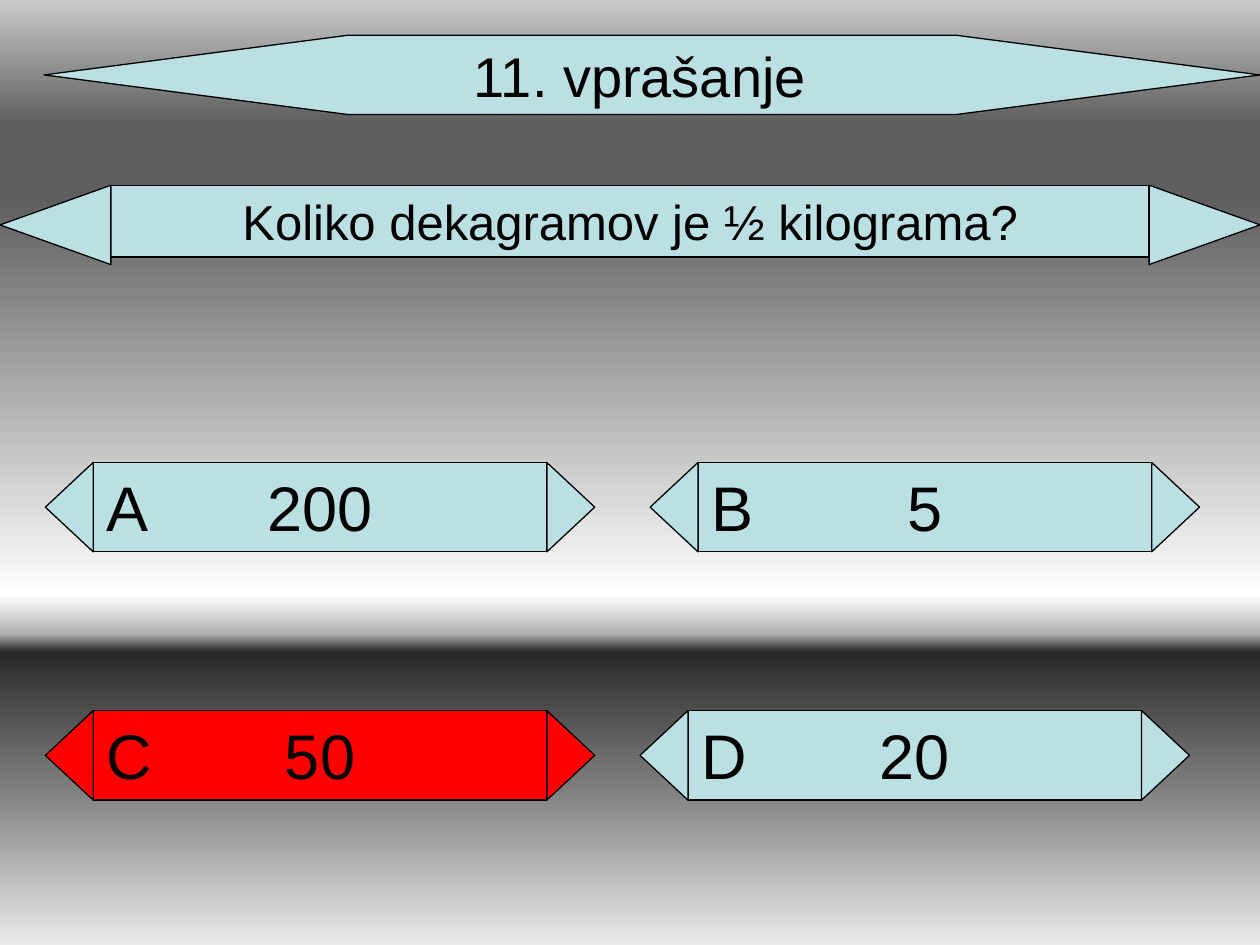
from lxml import etree
from pptx import Presentation
from pptx.dml.color import RGBColor
from pptx.enum import shapes, text
from pptx.oxml import ns
from pptx.util import Inches, Pt

# Content
TITLE = "11. vprašanje"
QUESTION = "Koliko dekagramov je ½ kilograma?"
ANSWERS = [  # letter, answer, bar left, bar top, fill
    ("A", "200", 0.74, 3.67, "panel"),
    ("D", "20", 5.46, 5.64, "panel"),
    ("B", "5", 5.54, 3.67, "panel"),
    ("C", "50", 0.74, 5.64, "correct"),
]
COLORS = {"panel": "BBE0E3", "correct": "FF0000", "ink": "000000"}
BACKGROUND = [(0, "CBCBCB"), (13, "5F5F5F"), (21, "5F5F5F"), (63, "FFFFFF"),
              (67, "B2B2B2"), (69, "292929"), (82, "777777"), (100, "EAEAEA")]
CENTER, LEFT = text.PP_ALIGN.CENTER, text.PP_ALIGN.LEFT
SHAPE = shapes.MSO_SHAPE


def rgb(name):
    return RGBColor.from_string(COLORS[name])


def write(sp, words, size=36, align=CENTER):
    tf = sp.text_frame
    tf.word_wrap = True
    tf.vertical_anchor = text.MSO_ANCHOR.TOP
    p = tf.paragraphs[0]
    p.alignment = align
    r = p.add_run()
    r.text = words
    r.font.name, r.font.size = "Arial", Pt(size)
    r.font.color.rgb = rgb("ink")


def add_panel(parent, kind, x, y, w, h, fill="panel", rotation=0):
    sp = parent.shapes.add_shape(kind, Inches(x), Inches(y), Inches(w), Inches(h))
    sp.shadow.inherit = False
    sp.fill.solid()
    sp.fill.fore_color.rgb = rgb(fill)
    sp.line.color.rgb = rgb("ink")
    sp.line.width = Pt(0.75)
    sp.rotation = rotation
    return sp


def add_label(parent, words, x, y, w, h, **fmt):
    box = parent.shapes.add_textbox(Inches(x), Inches(y), Inches(w), Inches(h))
    write(box, words, **fmt)


def add_banner(slide, words, x, y, w, h, tip, tip_h, size=36, fill="panel"):
    """Bar with an outward-pointing triangle at each end."""
    group = slide.shapes.add_group_shape()
    bar = add_panel(group, SHAPE.RECTANGLE, x, y, w, h, fill)
    write(bar, words, size=size)
    for center, rotation in ((x + w + tip / 2, 90), (x - tip / 2, 270)):
        # A turned triangle swaps its width and height around its centre
        add_panel(group, SHAPE.ISOSCELES_TRIANGLE, center - tip_h / 2,
                  y + (tip_h - tip) / 2, tip_h, tip, fill, rotation)
    return group


def paint_background(slide):
    fill = slide.background.fill
    fill.gradient()
    fill.gradient_angle = 270
    stops = slide.background.fill._xPr.find(".//" + ns.qn("a:gsLst"))
    for stop in list(stops):
        stops.remove(stop)
    for pos, color in BACKGROUND:
        gs = etree.SubElement(stops, ns.qn("a:gs"), pos=str(pos * 1000))
        etree.SubElement(gs, ns.qn("a:srgbClr"), val=color)


def main():
    prs = Presentation()
    prs.slide_width, prs.slide_height = Inches(10), Inches(7.5)
    slide = prs.slides.add_slide(prs.slide_layouts[6])
    paint_background(slide)

    # Title
    hexagon = add_panel(slide, SHAPE.HEXAGON, 0.35, 0.28, 9.65, 0.63)
    hexagon.adjustments[0] = 3.83
    add_label(slide, TITLE, 2.72, 0.28, 4.72, 0.63, size=32)

    # Question
    add_banner(slide, QUESTION, 0.88, 1.47, 8.24, 0.57, tip=0.88, tip_h=0.63, size=28)

    # Answers
    for letter, answer, x, y, fill in ANSWERS:
        group = add_banner(slide, answer, x, y, 3.6, 0.71, tip=0.38, tip_h=0.71, fill=fill)
        add_label(group, letter, x + 0.01, y, 0.47, 0.7, align=LEFT)

    prs.save("out.pptx")


if __name__ == "__main__":
    main()
